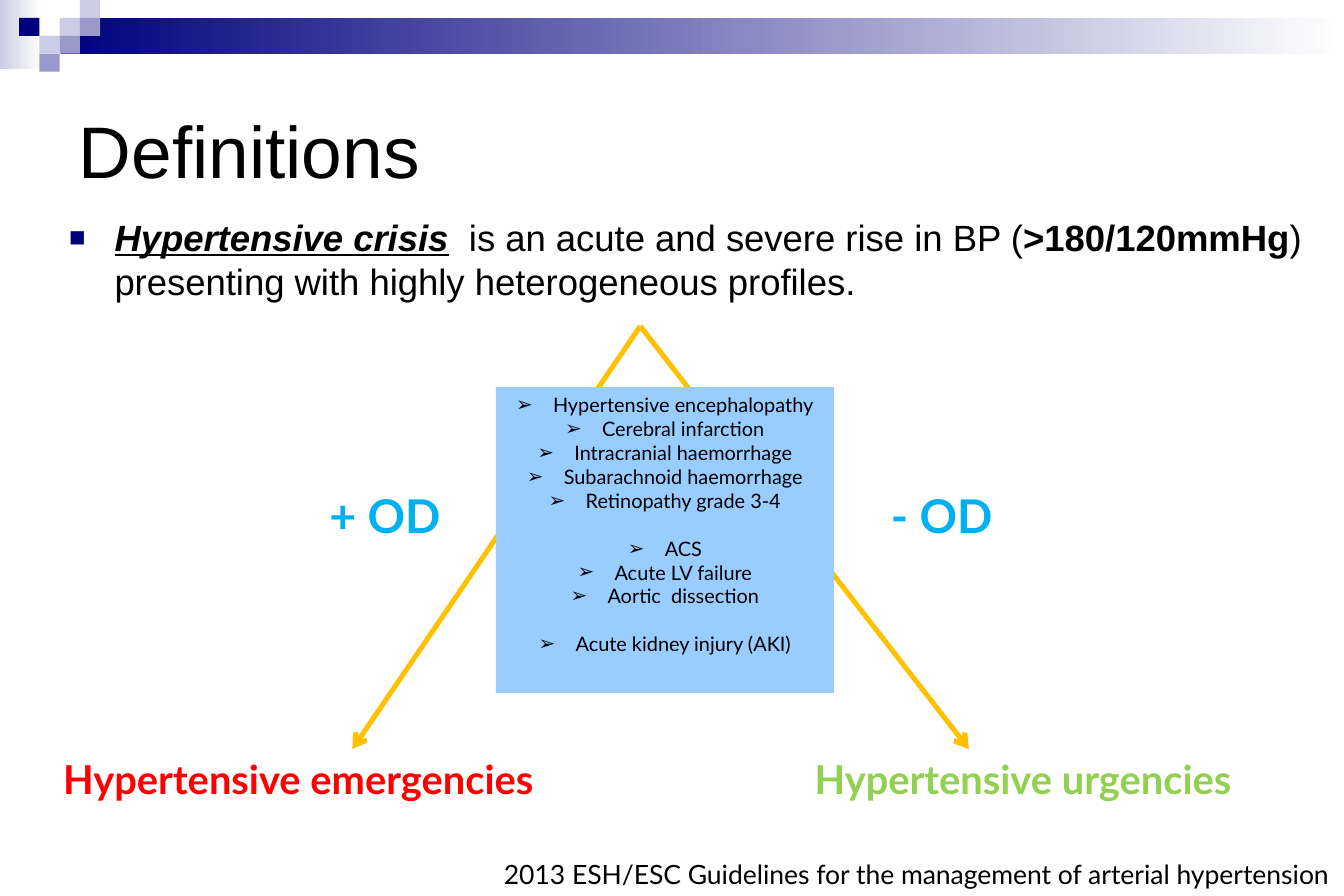
from pptx import Presentation
from pptx.dml.color import RGBColor as RGB
from pptx.enum.shapes import MSO_SHAPE as SHAPE, MSO_CONNECTOR as LINK
from pptx.enum.text import PP_ALIGN as AL, MSO_ANCHOR as ANC
from pptx.oxml.ns import qn
from pptx.util import Inches, Pt
from lxml.etree import SubElement as Sub

NAVY, LILAC, PALE = RGB(0, 0, 0x7D), RGB(0x99, 0x99, 0xCC), RGB(0xCC, 0xCC, 0xE6)
BLACK, WHITE, SKY = RGB(0, 0, 0), RGB(255, 255, 255), RGB(0x99, 0xCC, 0xFF)
RED, GREEN = RGB(255, 0, 0), RGB(0x92, 0xD0, 0x50)
CYAN, GOLD = RGB(0, 0xB0, 0xF0), RGB(0xFF, 0xC0, 0)

# Content; all places are percent of the slide's width and height
TITLE = "Definitions"
CRISIS = [("Hypertensive crisis", "biu"),
          ("  is an acute and severe rise in BP (", ""),
          (">180/120mmHg", "b"),
          (") presenting with highly heterogeneous profiles.", "")]
GROUPS = [["Hypertensive encephalopathy", "Cerebral infarction",
           "Intracranial haemorrhage", "Subarachnoid haemorrhage",
           "Retinopathy grade 3-4"],
          ["ACS", "Acute LV failure", "Aortic  dissection"],
          ["Acute kidney injury (AKI)"]]
CREDIT = "2013 ESH/ESC Guidelines for the management of arterial hypertension"
LABELS = [("+ OD", 23.64, 53.73, 11.8, 7.6, 28, CYAN),
          ("- OD", 65.42, 53.73, 9.7, 7.6, 28, CYAN),
          ("Hypertensive emergencies", 3.82, 83.6, 41.6, 6.67, 24, RED),
          ("Hypertensive urgencies", 59.73, 83.6, 37.96, 6.67, 24, GREEN)]
APEX, FEET = (47.64, 36.4), [(72.09, 83.6), (26.22, 83.6)]
FADES = [(0, 0, 3.1, 7.73, PALE), (4.53, 2, 95.47, 4, NAVY)]
TILES = [(2, 1, PALE), (3, 0, PALE), (3, 1, LILAC), (1, 2, PALE),
         (0, 1, NAVY), (2, 2, LILAC), (1, 3, LILAC)]  # column, row, colour
LEFT, COL, ROW = 1.42, 1.51, 2

deck = Presentation()
deck.slide_width, deck.slide_height = Inches(11.25), Inches(7.5)
slide = deck.slides.add_slide(deck.slide_layouts[6])
shapes = slide.shapes


def place(*lens):
    sides = (deck.slide_width, deck.slide_height) * 2
    return [round(n * side / 100) for n, side in zip(lens, sides)]


def block(x, y, w, h, tint, fade=False):
    box = shapes.add_shape(SHAPE.RECTANGLE, *place(x, y, w, h))
    box.shadow.inherit = False
    box.line.fill.background()
    if fade:
        box.fill.gradient()
        box.fill.gradient_angle = 0
        for stop, hue in zip(box.fill.gradient_stops, (tint, WHITE)):
            stop.color.rgb = hue
    else:
        box.fill.solid()
        box.fill.fore_color.rgb = tint
    return box


def label(x, y, w, h):
    return shapes.add_textbox(*place(x, y, w, h))


def bullet(para, mark, dent, tint=None, size=None):
    props = para._p.get_or_add_pPr()
    props.set("marL", str(Inches(dent)))
    props.set("indent", str(-Inches(dent)))
    if tint is not None:
        Sub(Sub(props, qn("a:buClr")), qn("a:srgbClr")).set("val", str(tint))
    if size:
        Sub(props, qn("a:buSzPct")).set("val", str(size * 1000))
    Sub(props, qn("a:buFont")).set("typeface", "Arial")
    Sub(props, qn("a:buChar")).set("char", mark)


def write(box, text, size, font="Lato", tint=BLACK, style="", align=AL.LEFT,
          anchor=ANC.TOP, gap=0, more=False):
    """Write a string, or (string, style) runs, as one paragraph."""
    frame = box.text_frame
    frame.word_wrap, frame.vertical_anchor = True, anchor
    para = frame.add_paragraph() if more else frame.paragraphs[0]
    para.alignment, para.space_before = align, Pt(gap)
    for words, look in [(text, style)] if isinstance(text, str) else text:
        run = para.add_run()
        run.text = words
        face = run.font
        face.name, face.size, face.color.rgb = font, Pt(size), tint
        face.bold, face.italic, face.underline = (c in look for c in "biu")
    return para


# Header band and mosaic
for *spot, tint in FADES:
    block(*spot, tint, fade=True)
for col, row, tint in TILES:
    block(LEFT + col * COL, row * ROW, COL, ROW, tint)

# Title, definition and credit
write(label(5, 6.67, 90, 20), TITLE, 44, font="Arial", anchor=ANC.MIDDLE)
para = write(label(4.27, 23.33, 94, 16.1), CRISIS, 22, font="Arial", gap=4.4)
bullet(para, "■", 0.38, tint=NAVY, size=75)
write(label(26.2, 95.07, 73.6, 4.93), CREDIT, 16, align=AL.RIGHT)

# Branch labels and outcomes
for text, x, y, w, h, size, tint in LABELS:
    write(label(x, y, w, h), text, size, tint=tint, style="b")

# Arrows from the definition to the outcomes
for foot in FEET:
    arrow = shapes.add_connector(LINK.STRAIGHT, *place(*APEX, *foot))
    arrow.line.color.rgb, arrow.line.width = GOLD, Pt(3)
    Sub(arrow.line._get_or_add_ln(), qn("a:tailEnd")).set("type", "arrow")
    Sub(arrow._element.spPr, qn("a:effectLst"))

# Organ damage list, one line of space between groups
panel = block(36.89, 43.2, 25.16, 34.13, SKY)
for g, group in enumerate(GROUPS):
    for i, item in enumerate(group):
        para = write(panel, item, 12, align=AL.CENTER, more=g + i > 0,
                     gap=14.4 if g and not i else 0)
        bullet(para, "➢", 0.31)

deck.save("out.pptx")
